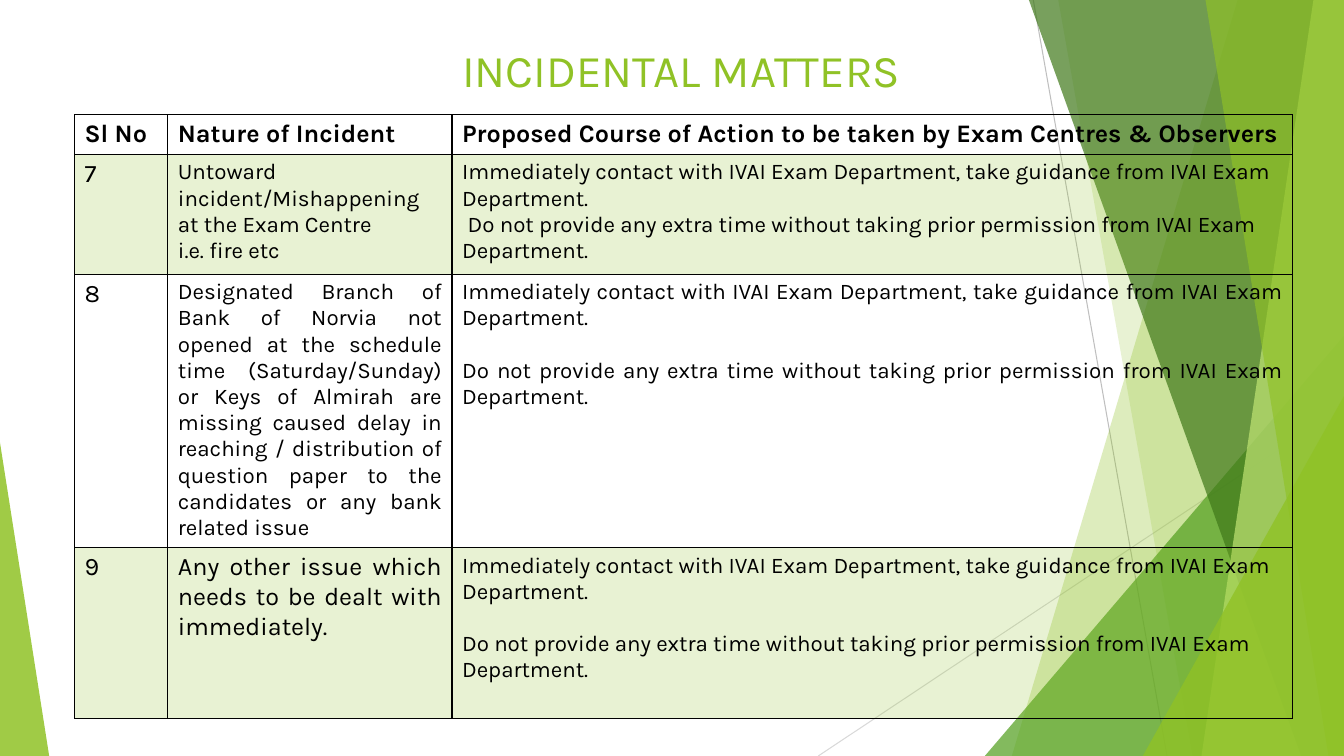
from dataclasses import dataclass

from lxml.etree import SubElement
from pptx import Presentation
from pptx.dml.color import RGBColor as Rgb
from pptx.enum.shapes import MSO_CONNECTOR as Link, MSO_SHAPE as Kind
from pptx.enum.text import MSO_ANCHOR as Anchor, PP_ALIGN as Align
from pptx.oxml.ns import qn
from pptx.util import Cm, Pt


@dataclass(frozen=True)
class Theme:
    font: str = "Karla"
    black: str = "000000"
    lime: str = "90C226"
    pale: str = "C0E474"
    leaf: str = "54A021"
    moss: str = "3F7819"
    ash: str = "BFBFBF"
    mist: str = "D9D9D9"
    title: float = 32.4
    large: float = 18
    body: float = 16
    gap: float = 18.7


T = Theme()
WIDE, HIGH = 33.87, 19.05

CALL = "Immediately contact with IVAI Exam Department, take guidance from IVAI Exam Department."
TIME = "Do not provide any extra time without taking prior permission from IVAI Exam Department."
FIRE = ["Untoward incident/Mishappening at the Exam Centre", "i.e. fire etc"]
BANK = ("Designated Branch of Bank of Norvia not opened at the schedule time "
        "(Saturday/Sunday) or Keys of Almirah are missing caused delay in reaching / "
        "distribution of question paper to the candidates or any bank related issue")
OTHER = "Any other issue which needs to be dealt with immediately."

HEAD = dict(size=T.large, bold=True)
NUM = dict(size=T.large)
JUST = dict(align=Align.JUSTIFY)
ROWS = [
    [(["Sl No"], HEAD), (["Nature of Incident"], HEAD),
     (["Proposed Course of Action to be taken by Exam Centres & Observers"], HEAD)],
    [(["7"], NUM), (FIRE, JUST), ([CALL, TIME], dict(indent=0.14))],
    [(["8"], NUM), ([BANK], JUST), ([CALL, TIME], dict(JUST, gap=T.gap))],
    [(["9"], NUM), ([OTHER], dict(JUST, size=T.large)), ([CALL, TIME], dict(gap=T.gap))],
]
COLS = [2.35, 7.16, 21.19]
TALL = [1.0, 3.02, 6.89, 4.31]


def put(item, **vals):
    for name, val in vals.items():
        setattr(item, name, val)


def tint(fill, color, alpha):
    """Give a solid fill with an opacity in percent."""
    fill.solid()
    fill.fore_color.rgb = Rgb.from_string(color)
    node = fill._xPr.find(qn("a:solidFill"))[0]
    SubElement(node, qn("a:alpha"), val=str(alpha * 1000))


def paint(shape, color, alpha):
    tint(shape.fill, color, alpha)
    shape.line.fill.background()
    shape.shadow.inherit = False


def style(par, size, color, bold=False, align=Align.LEFT):
    par.alignment = align
    put(par.font, name=T.font, size=Pt(size), bold=bold)
    par.font.color.rgb = Rgb.from_string(color)


def draw_line(shapes, start, end, color):
    line = shapes.add_connector(Link.STRAIGHT, *map(Cm, start + end))
    line.line.width = Pt(0.75)
    line.line.color.rgb = Rgb.from_string(color)
    SubElement(line._element.spPr, qn("a:effectLst"))


def draw_band(shapes, top, foot, color, alpha):
    """Fill the area between a slanted edge and the right side."""
    form = shapes.build_freeform(Cm(top), 0)
    form.add_line_segments([(Cm(x), Cm(y)) for x, y in
                            [(WIDE, 0), (WIDE, HIGH), (foot, HIGH)]])
    paint(form.convert_to_shape(), color, alpha)


def draw_peak(shapes, left, right, top, apex, color, alpha):
    """Stand a right triangle on the bottom edge."""
    peak = shapes.add_shape(Kind.ISOSCELES_TRIANGLE,
                            *map(Cm, (left, top, right - left, HIGH - top)))
    peak.adjustments[0] = apex
    paint(peak, color, alpha)


def add_decor(shapes):
    draw_line(shapes, (26.04, 0), (29.41, HIGH), T.ash)
    draw_line(shapes, (WIDE, 10.24), (20.62, HIGH), T.mist)
    draw_band(shapes, 31.19, 25.5, T.lime, 30)
    draw_band(shapes, 26.67, 30.05, T.lime, 20)
    draw_peak(shapes, 24.82, WIDE, 8.46, 1, T.leaf, 72)
    for top, foot, color, alpha in [(25.93, 32.79, T.moss, 70),
                                    (33.1, 30.28, T.pale, 70),
                                    (30.38, 33.48, T.lime, 65)]:
        draw_band(shapes, top, foot, color, alpha)
    draw_peak(shapes, 28.8, WIDE, 9.98, 1, T.lime, 80)
    draw_peak(shapes, 0, 1.24, 11.15, 0, T.lime, 85)


def add_title(shapes, left, top, width, height):
    title = shapes.title
    put(title, left=Cm(left), top=Cm(top), width=Cm(width), height=Cm(height))
    frame = title.text_frame
    frame.text = "INCIDENTAL MATTERS"
    put(frame, vertical_anchor=Anchor.TOP, word_wrap=True)
    style(frame.paragraphs[0], T.title, T.lime, align=Align.CENTER)
    shapes._spTree.append(title._element)


def edge_cell(cell):
    """Draw the four borders, which come before the fill."""
    props = cell._tc.get_or_add_tcPr()
    for spot, side in enumerate("LRTB"):
        edge = SubElement(props, qn(f"a:ln{side}"), w=str(Pt(1)))
        SubElement(SubElement(edge, qn("a:solidFill")), qn("a:srgbClr"), val=T.black)
        props.insert(spot, edge)


def fill_cell(cell, texts, size=T.body, bold=False, align=Align.LEFT, gap=0, indent=0):
    """Write paragraphs; gap and indent apply to those after the first."""
    frame = cell.text_frame
    frame.text = "\n".join(texts)
    for spot, par in enumerate(frame.paragraphs):
        style(par, size, T.black, bold, align)
        if spot:
            par.space_before = Pt(gap)
            par._p.get_or_add_pPr().set("indent", str(Cm(indent)))


def add_grid(shapes, left, top):
    box = map(Cm, (left, top, sum(COLS), sum(TALL)))
    table = shapes.add_table(len(ROWS), len(COLS), *box).table
    put(table, first_row=False, horz_banding=False)
    for col, width in zip(table.columns, COLS):
        col.width = Cm(width)
    for r, (row, height) in enumerate(zip(ROWS, TALL)):
        table.rows[r].height = Cm(height)
        for c, (texts, form) in enumerate(row):
            cell = table.cell(r, c)
            fill_cell(cell, texts, **form)
            if r % 2:
                tint(cell.fill, T.lime, 20)
            else:
                cell.fill.background()
            edge_cell(cell)


def main():
    deck = Presentation()
    put(deck, slide_width=Cm(WIDE), slide_height=Cm(HIGH))
    shapes = deck.slides.add_slide(deck.slide_layouts[5]).shapes
    add_decor(shapes)
    add_title(shapes, 5.23, 0.94, 23.88, 1.45)
    add_grid(shapes, 1.88, 2.89)
    deck.save("out.pptx")


if __name__ == "__main__":
    main()
